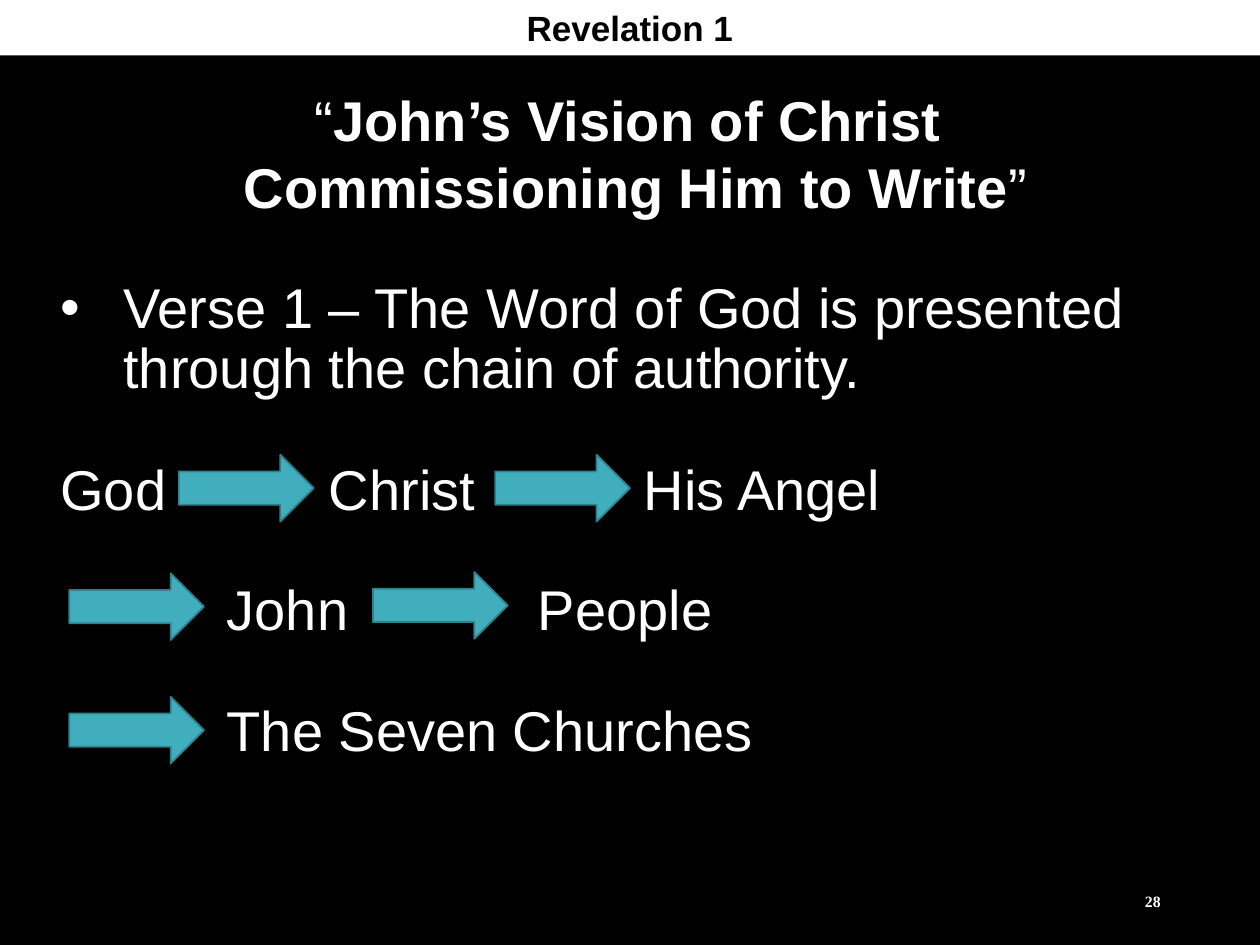
from dataclasses import dataclass

from lxml import etree
from pptx import Presentation
from pptx.dml.color import RGBColor
from pptx.enum.shapes import MSO_SHAPE
from pptx.enum.text import MSO_ANCHOR, MSO_AUTO_SIZE, PP_ALIGN
from pptx.oxml.ns import qn
from pptx.util import Inches, Pt

RECTANGLE, RIGHT_ARROW = MSO_SHAPE.RECTANGLE, MSO_SHAPE.RIGHT_ARROW
TOP, MIDDLE = MSO_ANCHOR.TOP, MSO_ANCHOR.MIDDLE
CENTER, LEFT, RIGHT = PP_ALIGN.CENTER, PP_ALIGN.LEFT, PP_ALIGN.RIGHT
NO_FIT = MSO_AUTO_SIZE.NONE

COLORS = {"black": "000000", "white": "FFFFFF", "arrow": "41AEBD", "arrow_edge": "30818C"}
ARROW_WIDTH, ARROW_HEIGHT = 1.07, 0.53
FIRST_ROW_TOP, ROW_PITCH, ROW_HEIGHT = 3.6, 0.96, 0.54


@dataclass
class ChainLink:
    text: str
    row: int
    left: float
    width: float


@dataclass
class Arrow:
    left: float
    top: float


CHAIN = [
    ChainLink("God", 0, 0.48, 0.9),
    ChainLink("Christ", 0, 2.61, 1.25),
    ChainLink("His Angel", 0, 5.11, 2.0),
    ChainLink("John", 1, 1.8, 1.1),
    ChainLink("People", 1, 4.27, 1.5),
    ChainLink("The Seven Churches", 2, 1.8, 4.4),
]
ARROWS = [
    Arrow(1.42, 3.61),
    Arrow(3.93, 3.61),
    Arrow(0.55, 4.55),
    Arrow(0.55, 5.53),
    Arrow(2.96, 4.54),
]
TITLE_LINES = [
    [("“", False), ("John’s Vision of Christ ", True)],
    [("Commissioning Him to Write", True), ("”", False)],
]


def rgb(name: str) -> RGBColor:
    return RGBColor.from_string(COLORS[name])


def place(shape, left: float, top: float, width: float, height: float) -> None:
    shape.left, shape.top = Inches(left), Inches(top)
    shape.width, shape.height = Inches(width), Inches(height)


def style(paragraph, size: float, color: str, align, bold=None, face: str = "Arial") -> None:
    paragraph.alignment = align
    font = paragraph.font
    font.name, font.size, font.bold = face, Pt(size), bold
    font.color.rgb = rgb(color)


def set_bullet(paragraph, char: str, indent: float) -> None:
    props = paragraph._p.get_or_add_pPr()
    props.set("marL", str(Inches(indent)))
    props.set("indent", str(-Inches(indent)))
    etree.SubElement(props, qn("a:buFont"), typeface="Arial")
    etree.SubElement(props, qn("a:buChar"), char=char)


def add_title(slide) -> None:
    title = slide.shapes.title
    place(title, 1.77, 0.62, 6.55, 1.18)
    frame = title.text_frame
    frame.word_wrap, frame.auto_size = False, NO_FIT
    frame.vertical_anchor = MIDDLE
    for index, line in enumerate(TITLE_LINES):
        paragraph = frame.add_paragraph() if index else frame.paragraphs[0]
        style(paragraph, 32, "white", CENTER)
        for text, bold in line:
            run = paragraph.add_run()
            run.text, run.font.bold = text, bold


def add_verse(slide) -> None:
    body = slide.placeholders[1]
    place(body, 0.38, 2.17, 9.19, 1.1)
    frame = body.text_frame
    frame.word_wrap, frame.auto_size = True, NO_FIT
    frame.vertical_anchor = TOP
    verse = frame.paragraphs[0]
    verse.text = "Verse 1 – The Word of God is presented through the chain of authority."
    set_bullet(verse, "•", 0.5)
    verse.space_before, verse.line_spacing = Pt(0), 0.9
    style(verse, 32, "white", LEFT)


def add_chain_link(slide, link: ChainLink) -> None:
    box = slide.shapes.add_textbox(
        Inches(link.left), Inches(FIRST_ROW_TOP + link.row * ROW_PITCH),
        Inches(link.width), Inches(ROW_HEIGHT))
    frame = box.text_frame
    frame.margin_left = frame.margin_right = frame.margin_top = frame.margin_bottom = 0
    frame.word_wrap, frame.vertical_anchor = True, MIDDLE
    paragraph = frame.paragraphs[0]
    paragraph.text = link.text
    style(paragraph, 32, "white", LEFT)


def add_header(slide) -> None:
    header = slide.shapes.add_shape(RECTANGLE, 0, 0, Inches(10), Inches(0.44))
    header.shadow.inherit = False
    header.fill.solid()
    header.fill.fore_color.rgb = rgb("white")
    header.line.fill.background()
    header.text_frame.vertical_anchor = TOP
    chapter = header.text_frame.paragraphs[0]
    chapter.text = "Revelation 1"
    style(chapter, 20, "black", CENTER, True)


def add_page_number(slide) -> None:
    box = slide.shapes.add_textbox(Inches(7.06), Inches(6.95), Inches(2.25), Inches(0.4))
    box.text_frame.word_wrap = True
    box.text_frame.vertical_anchor = MIDDLE
    number = box.text_frame.paragraphs[0]
    number.text = "28"
    style(number, 9, "white", RIGHT, True, "Times New Roman")


def add_arrow(slide, arrow: Arrow) -> None:
    shape = slide.shapes.add_shape(
        RIGHT_ARROW, Inches(arrow.left), Inches(arrow.top),
        Inches(ARROW_WIDTH), Inches(ARROW_HEIGHT))
    shape.shadow.inherit = False
    shape.fill.solid()
    shape.fill.fore_color.rgb = rgb("arrow")
    shape.line.color.rgb = rgb("arrow_edge")
    shape.line.width = Pt(1)


def main() -> None:
    deck = Presentation()
    deck.slide_width, deck.slide_height = Inches(10), Inches(7.5)
    slide = deck.slides.add_slide(deck.slide_layouts[1])
    slide.background.fill.solid()
    slide.background.fill.fore_color.rgb = rgb("black")
    add_title(slide)
    add_verse(slide)
    for link in CHAIN:
        add_chain_link(slide, link)
    add_header(slide)
    add_page_number(slide)
    for arrow in ARROWS:
        add_arrow(slide, arrow)
    deck.save("out.pptx")


if __name__ == "__main__":
    main()
